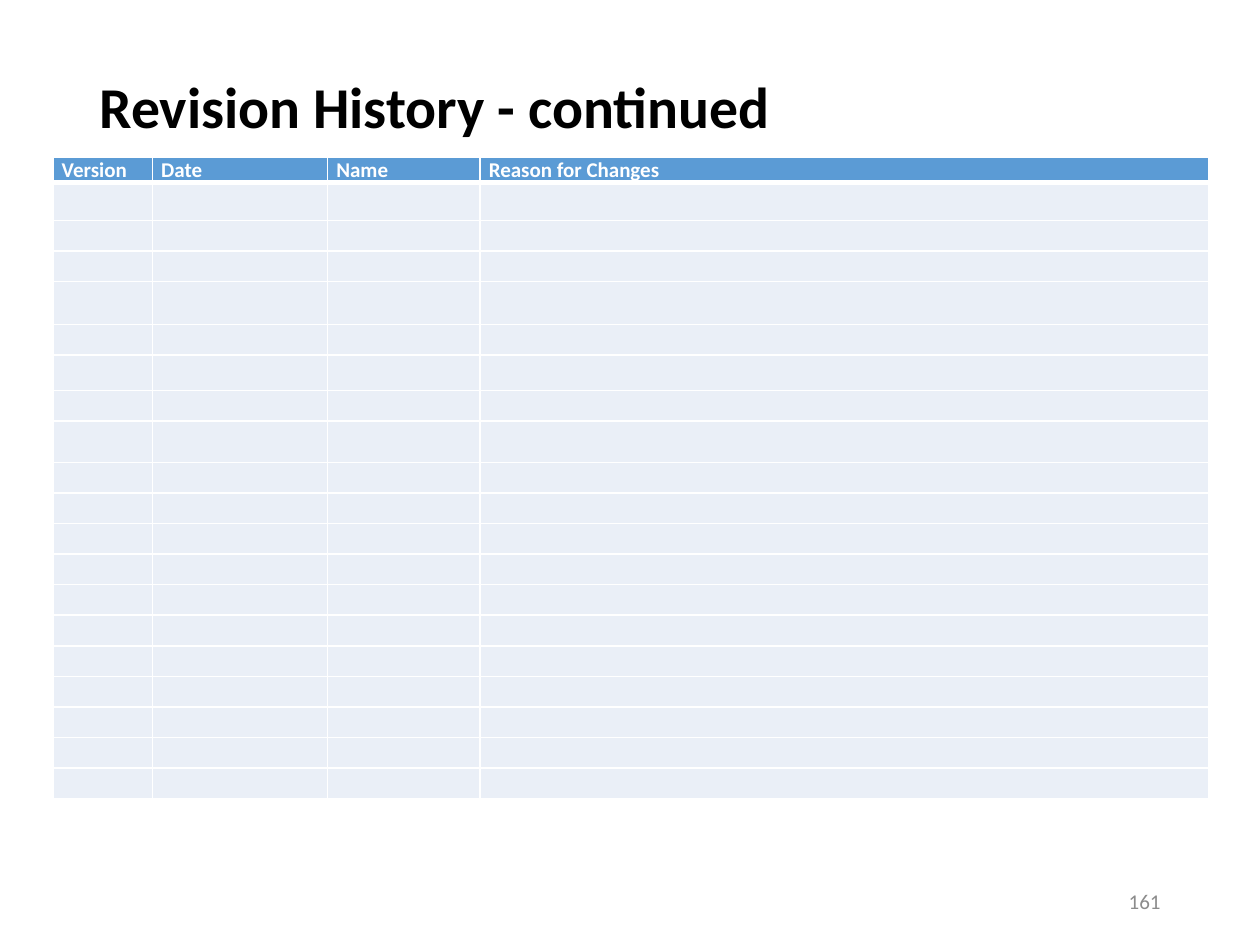
from lxml.etree import SubElement
from pptx import Presentation
from pptx.dml.color import RGBColor
from pptx.enum.text import MSO_ANCHOR, PP_ALIGN
from pptx.oxml.ns import qn
from pptx.util import Inches, Pt

COLORS = {
    "title": "000000",
    "header": "5B9BD5",
    "body": "EAEFF7",
    "white": "FFFFFF",
    "page_number": "8C8C8C",
}
FONT = "Calibri"
HEADINGS = ["Version", "Date", "Name", "Reason for Changes"]
COLUMN_WIDTHS = [0.79, 1.39, 1.21, 5.78]
ROW_COUNT = 20
TABLE_HEIGHT = 5.09
SPECIAL_HEIGHTS = {0: 0.2, 1: 0.3, 4: 0.34, 6: 0.28, 8: 0.33}


class SlideBuilder:
    def __init__(self, slide):
        self.slide = slide

    def add_run(self, paragraph, text, size, color, bold=False):
        run = paragraph.add_run()
        run.text = text
        run.font.name = FONT
        run.font.size = Pt(size)
        run.font.bold = bold
        run.font.color.rgb = RGBColor.from_string(COLORS[color])

    def add_text(self, bounds, text, size, color, bold=False, align=PP_ALIGN.LEFT,
                 anchor=MSO_ANCHOR.MIDDLE, top_inset=0.05, line_spacing=1.0):
        box = self.slide.shapes.add_textbox(*map(Inches, bounds))
        frame = box.text_frame
        frame.word_wrap = True
        frame.vertical_anchor = anchor
        frame.margin_top = Inches(top_inset)
        paragraph = frame.paragraphs[0]
        paragraph.alignment = align
        paragraph.line_spacing = line_spacing
        self.add_run(paragraph, text, size, color, bold)

    def set_borders(self, cell, bottom_width):
        properties = cell._tc.get_or_add_tcPr()
        edges = [("a:lnL", 1), ("a:lnR", 1), ("a:lnT", 1), ("a:lnB", bottom_width)]
        for position, (tag, width) in enumerate(edges):
            line = SubElement(properties, qn(tag), w=str(Pt(width)))
            fill = SubElement(line, qn("a:solidFill"))
            SubElement(fill, qn("a:srgbClr"), val=COLORS["white"])
            properties.insert(position, line)

    def style_cell(self, cell, heading):
        cell.margin_left = cell.margin_right = Inches(0.07)
        cell.margin_top = cell.margin_bottom = 0
        cell.fill.solid()
        fill_color = COLORS["header" if heading else "body"]
        cell.fill.fore_color.rgb = RGBColor.from_string(fill_color)
        self.set_borders(cell, 3 if heading else 1)
        paragraph = cell.text_frame.paragraphs[0]
        if heading:
            self.add_run(paragraph, heading, 12, "white", True)
        else:
            SubElement(paragraph._p, qn("a:endParaRPr"), sz="1200")

    def add_table(self, left, top, headings, widths, heights):
        table = self.slide.shapes.add_table(
            len(heights), len(widths), Inches(left), Inches(top),
            Inches(sum(widths)), Inches(sum(heights))).table
        table.horz_banding = False
        for column, width in zip(table.columns, widths):
            column.width = Inches(width)
        for index, (row, height) in enumerate(zip(table.rows, heights)):
            row.height = Inches(height)
            for cell, heading in zip(row.cells, headings):
                self.style_cell(cell, heading if index == 0 else None)


def main():
    presentation = Presentation()
    presentation.slide_width = Inches(10)
    presentation.slide_height = Inches(7.5)
    builder = SlideBuilder(presentation.slides.add_slide(presentation.slide_layouts[6]))

    builder.add_text((0.69, 0.4, 8.62, 1.45), "Revision History - continued", 33,
                     "title", bold=True, anchor=MSO_ANCHOR.TOP, top_inset=0.22,
                     line_spacing=0.9)

    regular_height = ((TABLE_HEIGHT - sum(SPECIAL_HEIGHTS.values()))
                      / (ROW_COUNT - len(SPECIAL_HEIGHTS)))
    row_heights = [SPECIAL_HEIGHTS.get(row, regular_height) for row in range(ROW_COUNT)]
    builder.add_table(0.42, 1.25, HEADINGS, COLUMN_WIDTHS, row_heights)

    builder.add_text((7.06, 6.95, 2.25, 0.4), "161", 12, "page_number",
                     align=PP_ALIGN.RIGHT)
    presentation.save("out.pptx")


if __name__ == "__main__":
    main()
